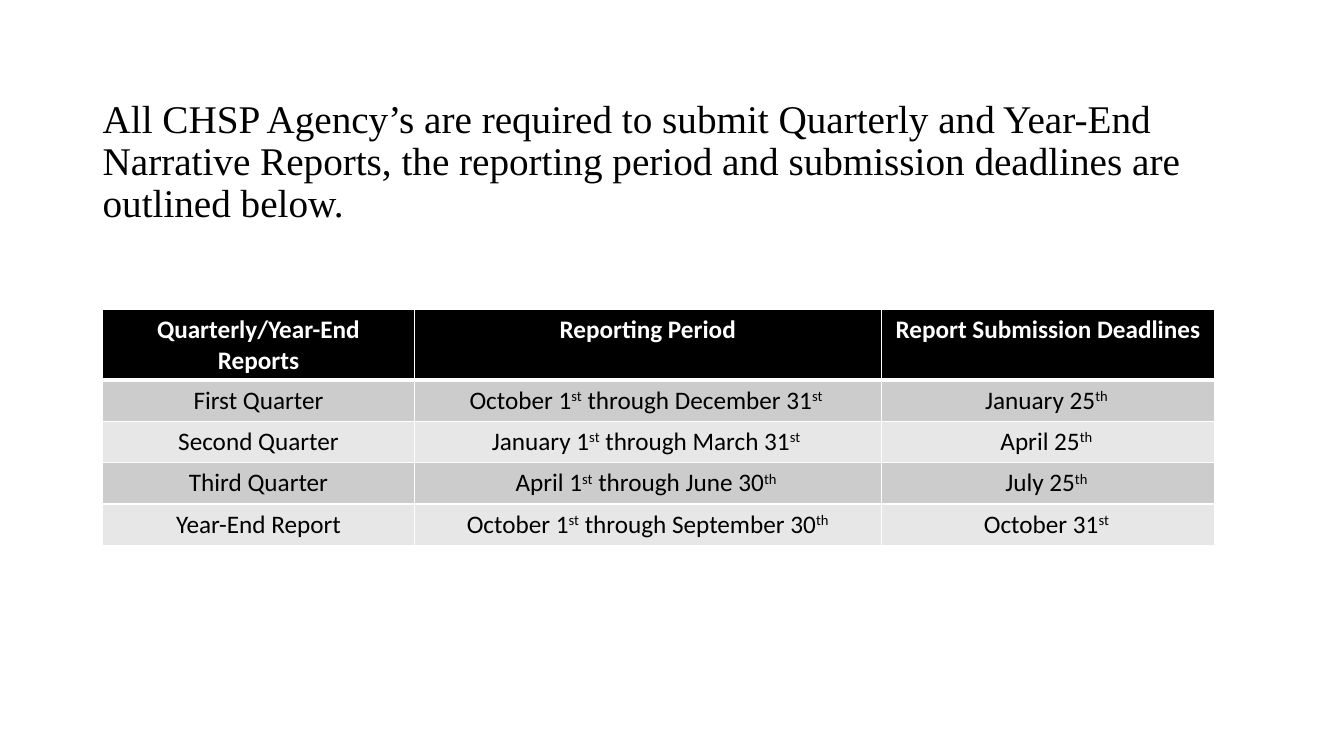
from lxml.etree import SubElement
from pptx import Presentation
from pptx.dml.color import RGBColor
from pptx.enum.text import MSO_ANCHOR as Anchor, PP_ALIGN as Align
from pptx.oxml.ns import qn
from pptx.util import Inches, Pt

COLORS = {"black": "000000", "white": "FFFFFF", "dark_band": "CCCCCC", "light_band": "E7E7E7"}
PAGE_WIDTH, PAGE_HEIGHT = 13.33, 7.5
TITLE = ("All CHSP Agency’s are required to submit Quarterly and Year-End Narrative Reports, "
         "the reporting period and submission deadlines are outlined below.")
SCHEDULE = [
    ("Quarterly/Year-End\nReports", "Reporting Period", "Report Submission Deadlines"),
    ("First Quarter", "October 1^st^ through December 31^st ", "January 25^th "),
    ("Second Quarter", "January 1^st^ through March 31^st ", "April 25^th "),
    ("Third Quarter", "April 1^st^ through June 30^th ", "July 25^th "),
    ("Year-End Report", "October 1^st^ through September 30^th", "October 31^st "),
]
COLUMN_SHARES = (0.28, 0.42, 0.3)
HEADER_HEIGHT, ROW_HEIGHT = 0.7, 0.41


def add_span(para, text, font, size, color, bold=False, raised=False):
    """Add one formatted run, raised as superscript if asked."""
    span = para.add_run()
    span.text = text
    span.font.name = font
    span.font.size = Pt(size)
    span.font.bold = bold
    span.font.color.rgb = RGBColor.from_string(COLORS[color])
    if raised:
        span.font._element.set("baseline", "30000")


def add_marked_text(para, text, color, bold):
    """Write text in which ^ switches superscript and a newline breaks the line."""
    for line_index, line in enumerate(text.split("\n")):
        if line_index:
            para.add_line_break()
        for index, part in enumerate(line.split("^")):
            add_span(para, part, "Calibri", 18, color, bold, raised=index % 2 == 1)


def set_borders(cell, top, bottom):
    """Give a cell white borders, with top and bottom widths in points."""
    properties = cell._tc.get_or_add_tcPr()
    for side, width in (("L", 1), ("R", 1), ("T", top), ("B", bottom)):
        line = SubElement(properties, qn(f"a:ln{side}"), w=str(Pt(width)))
        fill = SubElement(line, qn("a:solidFill"))
        SubElement(fill, qn("a:srgbClr"), val=COLORS["white"])


def add_title(page, left, top, width, height):
    """Place the opening statement, centred vertically in its box."""
    box = page.shapes.add_textbox(Inches(left), Inches(top), Inches(width), Inches(height))
    frame = box.text_frame
    frame.word_wrap = True
    frame.vertical_anchor = Anchor.MIDDLE
    para = frame.paragraphs[0]
    para.line_spacing = 0.9
    add_span(para, TITLE, "Times New Roman", 28, "black")


def add_schedule(page, left, top, width):
    """Place the table of reporting periods and deadlines."""
    height = HEADER_HEIGHT + ROW_HEIGHT * (len(SCHEDULE) - 1)
    table = page.shapes.add_table(len(SCHEDULE), len(COLUMN_SHARES), Inches(left), Inches(top),
                                  Inches(width), Inches(height)).table
    table.horz_banding = False
    for column, share in zip(table.columns, COLUMN_SHARES):
        column.width = Inches(width * share)
    for row_index, texts in enumerate(SCHEDULE):
        header = row_index == 0
        table.rows[row_index].height = Inches(HEADER_HEIGHT if header else ROW_HEIGHT)
        band = "black" if header else ("light_band", "dark_band")[row_index % 2]
        for column_index, text in enumerate(texts):
            cell = table.cell(row_index, column_index)
            set_borders(cell, top=3 if row_index == 1 else 1, bottom=3 if header else 1)
            cell.fill.solid()
            cell.fill.fore_color.rgb = RGBColor.from_string(COLORS[band])
            para = cell.text_frame.paragraphs[0]
            para.alignment = Align.CENTER
            add_marked_text(para, text, "white" if header else "black", header)


def main():
    """Build the slide and save the deck."""
    deck = Presentation()
    deck.slide_width, deck.slide_height = Inches(PAGE_WIDTH), Inches(PAGE_HEIGHT)
    page = deck.slides.add_slide(deck.slide_layouts[6])
    add_title(page, 0.92, 0.89, 11.5, 1.45)
    add_schedule(page, 1.02, 3.07, 11.03)
    deck.save("out.pptx")


if __name__ == "__main__":
    main()
